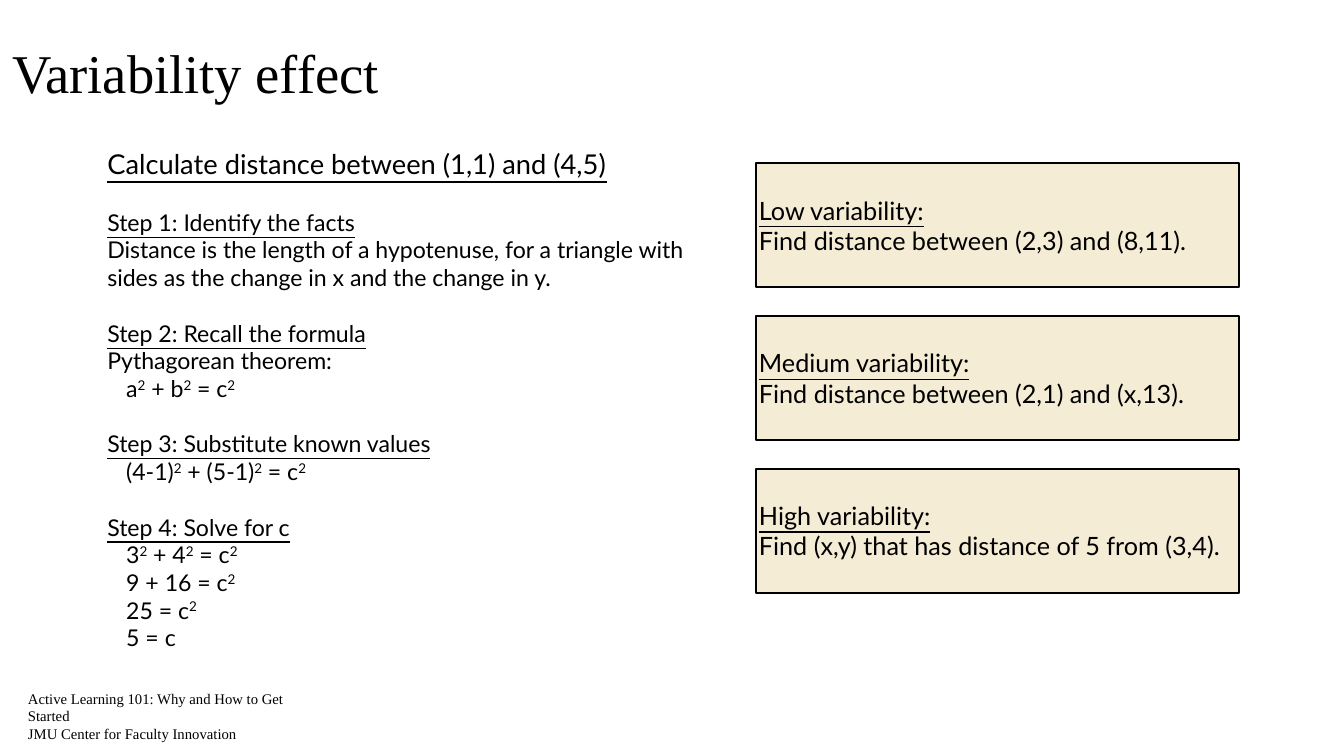
from pptx import Presentation
from pptx.dml.color import RGBColor
from pptx.enum.shapes import MSO_SHAPE as SHAPE
from pptx.enum.text import MSO_ANCHOR as ANCHOR, MSO_AUTO_SIZE as AUTO, PP_ALIGN as ALIGN
from pptx.util import Inches, Pt

BLACK, CREAM = "000000", "F5ECD6"
SERIF, SANS = "Times New Roman", "Lato"
BODY_SIZE = 22
LINE = 1.2 * BODY_SIZE

STEPS = [
    ("Step 1: Identify the facts",
     ["Distance is the length of a hypotenuse, for a triangle with sides as "
      "the change in x and the change in y."], []),
    ("Step 2: Recall the formula", ["Pythagorean theorem:"], ["a² + b² = c²"]),
    ("Step 3: Substitute known values", [], ["(4-1)² + (5-1)² = c²"]),
    ("Step 4: Solve for c", [],
     ["3² + 4² = c²", "9 + 16 = c²", "25 = c²", "5 = c"]),
]
PROBLEMS = [
    ("Low variability:", "Find distance between (2,3) and (8,11)."),
    ("Medium variability:", "Find distance between (2,1) and (x,13)."),
    ("High variability:", "Find (x,y) that has distance of 5 from (3,4)."),
]


def color(hex_string):
    return RGBColor.from_string(hex_string)


def set_frame(tf, inset=0.04):
    tf.word_wrap = True
    tf.auto_size = AUTO.NONE
    tf.vertical_anchor = ANCHOR.MIDDLE
    tf.margin_left = tf.margin_right = Inches(inset)
    tf.margin_top = tf.margin_bottom = Inches(inset)


def add_text(tf, text, size, font=SANS, underline=False, before=0, indent=0):
    """Add a left-aligned paragraph; each ² becomes a superscript 2."""
    p = tf.paragraphs[0]
    if p.runs:
        p = tf.add_paragraph()
    p.alignment = ALIGN.LEFT
    if before:
        p.space_before = Pt(before)
    if indent:
        p._p.get_or_add_pPr().set("indent", str(Inches(indent)))
    for i, part in enumerate(text.split("²")):
        pieces = [(part, False)] if i == 0 else [("2", True), (part, False)]
        for piece, raised in pieces:
            if not piece:
                continue
            r = p.add_run()
            r.text = piece
            r.font.name, r.font.size = font, Pt(size)
            r.font.underline = underline
            r.font.color.rgb = color(BLACK)
            if raised:
                r._r.get_or_add_rPr().set("baseline", "32000")


def add_box(slide, left, top, width, height, inset=0.04):
    sp = slide.shapes.add_textbox(*map(Inches, (left, top, width, height)))
    set_frame(sp.text_frame, inset)
    return sp.text_frame


def add_title(slide, text):
    sp = slide.shapes.title
    sp.left, sp.top, sp.width, sp.height = map(Inches, (0.12, 0.4, 11.31, 1.1))
    set_frame(sp.text_frame)
    add_text(sp.text_frame, text, 52, SERIF)


def add_footer(slide):
    tf = add_box(slide, 0.33, 9.21, 4.02, 0.52)
    for text in ("Active Learning 101: Why and How to Get Started",
                 "JMU Center for Faculty Innovation"):
        add_text(tf, text, 14, SERIF)


def add_worked_example(slide):
    tf = add_box(slide, 1.36, 1.44, 8.28, 7.69, 0.06)
    add_text(tf, "Calculate distance between (1,1) and (4,5)", 26, underline=True)
    for heading, notes, formulas in STEPS:
        add_text(tf, heading, BODY_SIZE, underline=True, before=LINE)
        for note in notes:
            add_text(tf, note, BODY_SIZE)
        for formula in formulas:
            add_text(tf, formula, BODY_SIZE, indent=0.25)


def add_problem(slide, row, heading, task):
    sp = slide.shapes.add_shape(
        SHAPE.RECTANGLE, *map(Inches, (10, 2.16 + 2.02 * row, 6.39, 1.64)))
    sp.shadow.inherit = False
    sp.fill.solid()
    sp.fill.fore_color.rgb = color(CREAM)
    sp.line.color.rgb = color(BLACK)
    sp.line.width = Pt(2)
    set_frame(sp.text_frame)
    add_text(sp.text_frame, heading, 24, underline=True)
    add_text(sp.text_frame, task, 24)


def main():
    prs = Presentation()
    prs.slide_width, prs.slide_height = Inches(17.78), Inches(10)
    slide = prs.slides.add_slide(prs.slide_layouts[5])
    add_footer(slide)
    add_title(slide, "Variability effect")
    add_worked_example(slide)
    for row, (heading, task) in enumerate(PROBLEMS):
        add_problem(slide, row, heading, task)
    prs.save("out.pptx")


if __name__ == "__main__":
    main()
